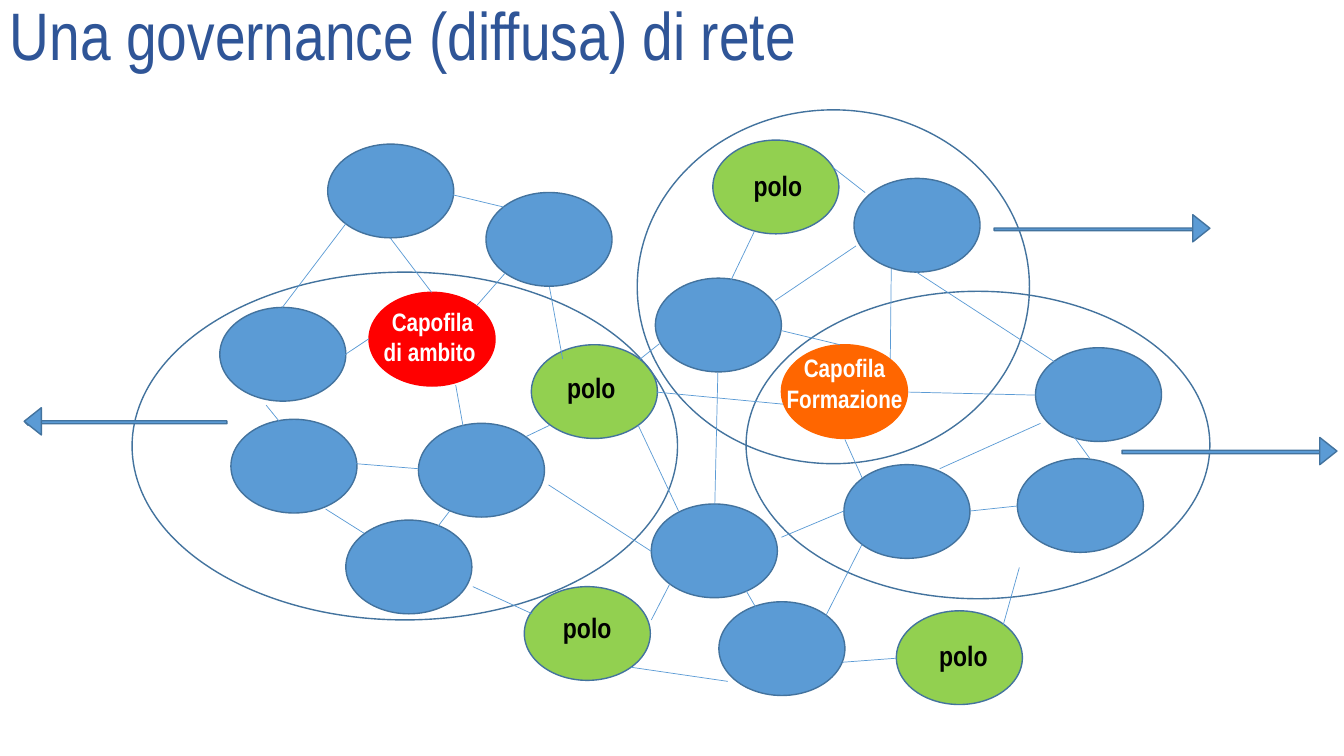
"""Draw the slide on a network of schools; places count cells of a tenth of an inch."""
from dataclasses import dataclass

from lxml import etree
from pptx import Presentation
from pptx.dml.color import RGBColor as Rgb
from pptx.enum.shapes import MSO_CONNECTOR as Wire, MSO_SHAPE as Kind
from pptx.enum.text import MSO_ANCHOR as Anchor, PP_ALIGN as Align
from pptx.oxml.ns import qn
from pptx.util import Inches, Length, Pt

FONT = "Arial Narrow"
COLS, ROWS = 133.3, 75
NODE = (12.5, 9.3)
COLORS = {
    "blue": "5B9BD5", "edge": "43739E", "green": "92D050", "red": "FF0000",
    "orange": "FF6600", "title": "2F5597", "white": "FFFFFF", "black": "000000",
}


@dataclass
class Node:
    col: float
    row: float
    fill: str = "blue"
    edge: str = "edge"


@dataclass
class Zone:
    col: float
    row: float
    wide: float
    high: float


@dataclass
class Label:
    text: str
    box: Zone
    size: int = 20
    color: str = "black"
    bold: bool = True
    align: Align = Align.CENTER
    pitch: float = 0.9
    wrap: bool = True
    oval: bool = False


@dataclass
class Link:
    col: float
    row: float
    to_col: float
    to_row: float


@dataclass
class Arrow:
    bar: Zone
    head: float
    left: bool = False


NODES = [
    Node(21.8, 30.5), Node(36.6, 29, "red", "red"), Node(32.5, 14.3), Node(48.2, 19.1),
    Node(52.7, 34.2, "green"), Node(22.9, 41.6), Node(34.3, 51.6), Node(41.5, 42),
    Node(52, 58.2, "green"), Node(64.6, 50), Node(71.3, 59.7), Node(84.7, 17.7),
    Node(83.7, 46.1), Node(88.9, 60.6, "green"), Node(70.7, 13.9, "green"),
    Node(65, 27.6), Node(77.5, 34.2, "orange", "orange"), Node(102.7, 34.5),
    Node(100.9, 45.5),
]
ZONES = [Zone(63.2, 10.9, 38.9, 35.1), Zone(13.1, 27, 54.1, 34.5), Zone(74, 28.9, 46, 30.5)]
POLES = [(88.9, 63.2), (70.5, 16.6), (52, 36.6), (51.6, 60.4)]
LABELS = [
    Label("Una governance (diffusa) di rete", Zone(0, -0.2, COLS, 11.3), 48, "title",
          False, Align.LEFT),
    Label("Capofila di ambito ", Zone(34.4, 28.7, 17, 9.3), 18, "white", pitch=1, oval=True),
    Label("Capofila \nFormazione ", Zone(77, 34.5, 14.1, 7.1), 18, "white", pitch=1, wrap=False),
    *(Label("polo", Zone(col, row, 13.3, 7.5)) for col, row in POLES),
]
LINKS = [Link(*ends) for ends in [
    (44.8, 19.3, 50.6, 20.7), (35.3, 46, 41.5, 46.5), (77.5, 32.8, 83.3, 34.2),
    (34.3, 22.2, 28, 30.5), (50.1, 27.1, 47.3, 30.3), (34.2, 35.2, 36.6, 33.6),
    (26.4, 40.2, 27.7, 41.8), (32.3, 50.5, 36.1, 52.9), (45.2, 38.2, 46, 42.7),
    (52.2, 43.3, 54.5, 42.2), (43.3, 52.4, 44.6, 50.7), (46.9, 58.2, 52.8, 60.9),
    (63.3, 42.2, 67.3, 50.7), (54.4, 48.1, 64.6, 54.7), (64.6, 61.5, 66.4, 58),
    (74, 58.6, 75.1, 60.5), (62.6, 66.2, 72.2, 67.6), (77.5, 53.3, 83.7, 50.7),
    (83.8, 43.6, 85.5, 47.4), (72.5, 27.8, 74.8, 23), (84.9, 24.4, 76.9, 29.8),
    (63.4, 35.7, 65.4, 34.1), (65.1, 38.9, 77.7, 40.1), (54.5, 28.5, 55.8, 35.6),
    (38.7, 23.6, 42.8, 29), (82.6, 16.6, 85.8, 19.1), (90.9, 27, 104.6, 35.9),
    (88.4, 26.7, 88.3, 35.6), (90.1, 38.9, 102.7, 39.2), (96.2, 50.7, 100.9, 50.2),
    (108.1, 45.5, 106.5, 43.3), (93.2, 46.5, 103.2, 42), (83.6, 65.7, 88.9, 65.3),
    (99.5, 62, 101.1, 56.3), (81.9, 61.1, 85.5, 54), (71.2, 37, 70.9, 50),
]]
ARROWS = [
    Arrow(Zone(111.3, 44.5, 20, 0.7), 130.4),
    Arrow(Zone(98.6, 22.5, 20, 0.5), 117.8),
    Arrow(Zone(2.5, 41.6, 20, 0.6), 1.9, left=True),
]


def cell(count: float) -> Length:
    return Inches(count / 10)


def place(box: Zone) -> list[Length]:
    return [cell(n) for n in (box.col, box.row, box.wide, box.high)]


def tint(name: str) -> Rgb:
    return Rgb.from_string(COLORS[name])


def shape(slide, kind: Kind, box: Zone, fill: str | None, edge: str | None):
    item = slide.shapes.add_shape(kind, *place(box))
    item.shadow.inherit = False
    if fill:
        item.fill.solid()
        item.fill.fore_color.rgb = tint(fill)
    else:
        item.fill.background()
    if edge:
        item.line.color.rgb = tint(edge)
        item.line.width = Pt(1)
    else:
        item.line.fill.background()
    return item


def write(slide, label: Label) -> None:
    if label.oval:
        item = shape(slide, Kind.OVAL, label.box, None, None)
        item.text_frame.vertical_anchor = Anchor.MIDDLE
    else:
        item = slide.shapes.add_textbox(*place(label.box))
    frame = item.text_frame
    frame.word_wrap = label.wrap
    frame.text = label.text
    for line in frame.paragraphs:
        line.alignment = label.align
        line.line_spacing = label.pitch
        for run in line.runs:
            font = run.font
            font.name, font.size, font.bold = FONT, Pt(label.size), label.bold
            font.color.rgb = tint(label.color)


def join(slide, link: Link) -> None:
    ends = [cell(n) for n in (link.col, link.row, link.to_col, link.to_row)]
    wire = slide.shapes.add_connector(Wire.STRAIGHT, *ends)
    wire.line.color.rgb = tint("blue")
    wire.line.width = Pt(0.5)
    etree.SubElement(wire.element.spPr, qn("a:effectLst"))


def point(slide, arrow: Arrow) -> None:
    kind = Kind.LEFT_ARROW if arrow.left else Kind.RIGHT_ARROW
    shape(slide, kind, arrow.bar, "blue", "edge")
    wide, high = 2.7, 1.7
    row = arrow.bar.row + (arrow.bar.high - high) / 2 - 0.1
    head = shape(slide, Kind.ISOSCELES_TRIANGLE, Zone(arrow.head, row, wide, high), "blue", "edge")
    head.rotation = 270 if arrow.left else 90


def main() -> None:
    deck = Presentation()
    deck.slide_width, deck.slide_height = cell(COLS), cell(ROWS)
    slide = deck.slides.add_slide(deck.slide_layouts[6])
    for node in NODES:
        shape(slide, Kind.OVAL, Zone(node.col, node.row, *NODE), node.fill, node.edge)
    for label in LABELS:
        write(slide, label)
    for zone in ZONES:
        shape(slide, Kind.OVAL, zone, None, "edge")
    for link in LINKS:
        join(slide, link)
    for arrow in ARROWS:
        point(slide, arrow)
    deck.save("out.pptx")


if __name__ == "__main__":
    main()
